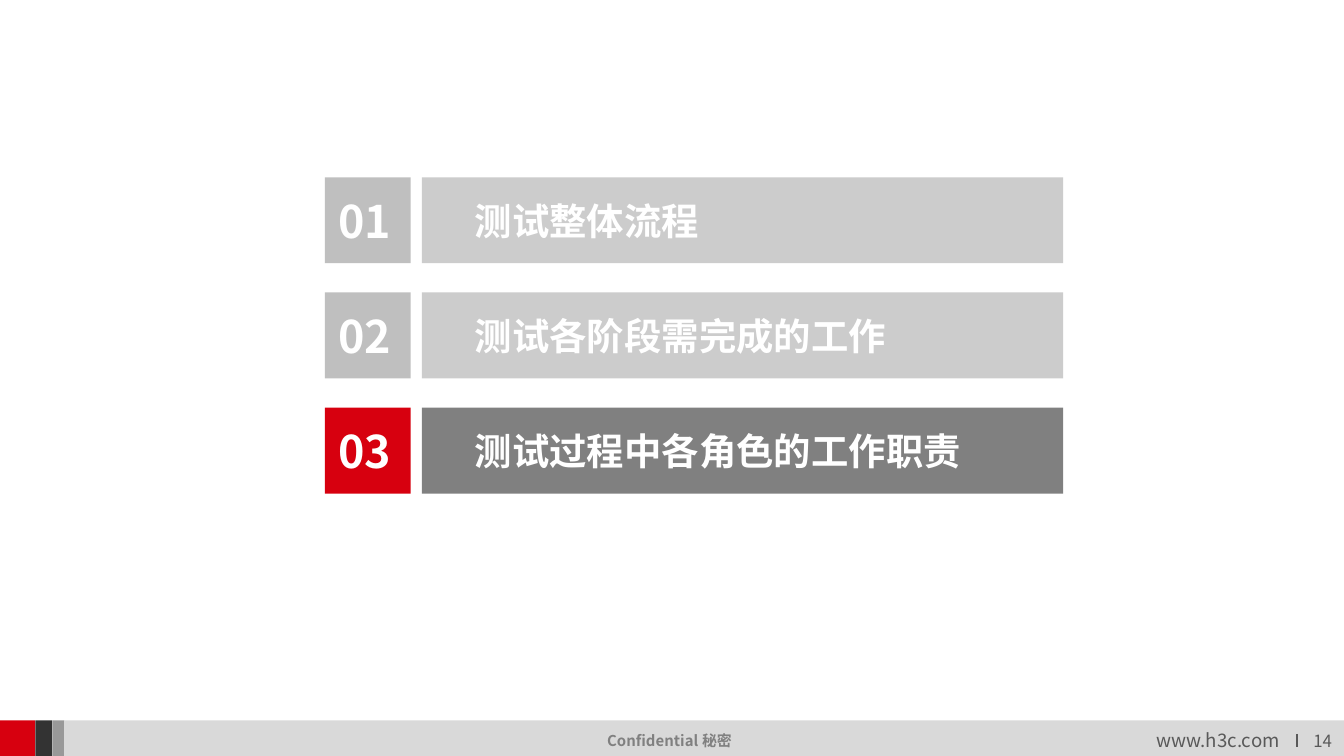
from dataclasses import dataclass

from lxml import etree
from pptx import Presentation
from pptx.dml.color import RGBColor
from pptx.enum.shapes import MSO_CONNECTOR, MSO_SHAPE
from pptx.enum.text import MSO_ANCHOR, MSO_AUTO_SIZE, PP_ALIGN
from pptx.oxml.ns import qn
from pptx.util import Pt

RECTANGLE = MSO_SHAPE.RECTANGLE
STRAIGHT = MSO_CONNECTOR.STRAIGHT
MIDDLE = MSO_ANCHOR.MIDDLE
FIT_SHAPE = MSO_AUTO_SIZE.SHAPE_TO_FIT_TEXT
LEFT, RIGHT = PP_ALIGN.LEFT, PP_ALIGN.RIGHT


@dataclass(frozen=True)
class Theme:
    font: str = "Noto Sans CJK SC"
    white: str = "FFFFFF"
    red: str = "D7000F"
    number_fill: str = "BFBFBF"
    title_fill: str = "CCCCCC"
    active_title_fill: str = "808080"
    band: str = "D9D9D9"
    dark_band: str = "333333"
    mid_band: str = "999999"
    footer_text: str = "595959"
    notice_text: str = "808080"
    number_size: float = 24
    title_size: float = 20
    address_size: float = 10
    page_size: float = 9
    notice_size: float = 8


THEME = Theme()
SLIDE_WIDTH, SLIDE_HEIGHT = 720, 405
CHAPTERS = ["测试整体流程", "测试各阶段需完成的工作", "测试过程中各角色的工作职责"]
ACTIVE_CHAPTER = 3
ROW_TOP, ROW_PITCH, ROW_HEIGHT = 95, 61.7, 46
NUMBER_LEFT, TITLE_LEFT, TITLE_WIDTH = 174, 226, 343.6
BAND_TOP = 386


def write_text(shape, text, *, size, color, bold=False, align=LEFT,
               wrap=True, insets=(7.2, 3.6, 7.2, 3.6)):
    """Insets are left, top, right and bottom."""
    frame = shape.text_frame
    frame.word_wrap = wrap
    frame.vertical_anchor = MIDDLE
    (frame.margin_left, frame.margin_top,
     frame.margin_right, frame.margin_bottom) = map(Pt, insets)
    paragraph = frame.paragraphs[0]
    paragraph.alignment = align
    run = paragraph.add_run()
    run.text = text
    run.font.size = Pt(size)
    run.font.bold = bold
    run.font.color.rgb = RGBColor.from_string(color)
    run.font.name = THEME.font
    east_asian = etree.SubElement(run.font._element, qn("a:ea"))
    east_asian.set("typeface", THEME.font)


def add_block(slide, left, top, width, height, fill):
    block = slide.shapes.add_shape(RECTANGLE, Pt(left), Pt(top), Pt(width), Pt(height))
    block.shadow.inherit = False
    block.fill.solid()
    block.fill.fore_color.rgb = RGBColor.from_string(fill)
    block.line.fill.background()
    return block


def add_label(slide, left, top, width, height, text, *, fit=False, **text_format):
    label = slide.shapes.add_textbox(Pt(left), Pt(top), Pt(width), Pt(height))
    write_text(label, text, wrap=not fit, **text_format)
    if fit:
        label.text_frame.auto_size = FIT_SHAPE


def add_divider(slide, x, top, bottom):
    divider = slide.shapes.add_connector(STRAIGHT, Pt(x), Pt(top), Pt(x), Pt(bottom))
    divider.line.color.rgb = RGBColor.from_string(THEME.footer_text)
    divider.line.width = Pt(0.75)
    etree.SubElement(divider._element.spPr, qn("a:effectLst"))


def add_chapter(slide, number, title):
    top = ROW_TOP + (number - 1) * ROW_PITCH
    active = number == ACTIVE_CHAPTER
    number_box = add_block(slide, NUMBER_LEFT, top, ROW_HEIGHT, ROW_HEIGHT,
                           THEME.red if active else THEME.number_fill)
    write_text(number_box, f"{number:02}", size=THEME.number_size,
               color=THEME.white, bold=True)
    title_bar = add_block(slide, TITLE_LEFT, top, TITLE_WIDTH, ROW_HEIGHT,
                          THEME.active_title_fill if active else THEME.title_fill)
    write_text(title_bar, title, size=THEME.title_size, color=THEME.white,
               bold=True, insets=(28.35, 3.6, 7.2, 3.6))


def add_footer(slide):
    edges = [0, 18.9, 28, 34.5, SLIDE_WIDTH]
    fills = [THEME.red, THEME.dark_band, THEME.mid_band, THEME.band]
    for left, right, fill in zip(edges, edges[1:], fills):
        add_block(slide, left, BAND_TOP, right - left, SLIDE_HEIGHT - BAND_TOP, fill)
    add_label(slide, 612.7, 386.6, 81.4, 19.4, "www.h3c.com", fit=True,
              size=THEME.address_size, color=THEME.footer_text)
    add_label(slide, 318.2, 388, 83.5, 17, "Confidential 秘密", fit=True,
              size=THEME.notice_size, color=THEME.notice_text, bold=True)
    add_label(slide, 689, 387.4, 31.7, 17.3, "14", size=THEME.page_size,
              color=THEME.footer_text, align=RIGHT, insets=(7.2, 5.7, 7.2, 3.6))
    add_divider(slide, 694.8, 393.2, 400.4)


def main():
    presentation = Presentation()
    presentation.slide_width = Pt(SLIDE_WIDTH)
    presentation.slide_height = Pt(SLIDE_HEIGHT)
    slide = presentation.slides.add_slide(presentation.slide_layouts[6])
    add_footer(slide)
    for number, title in enumerate(CHAPTERS, start=1):
        add_chapter(slide, number, title)
    presentation.save("out.pptx")


if __name__ == "__main__":
    main()
